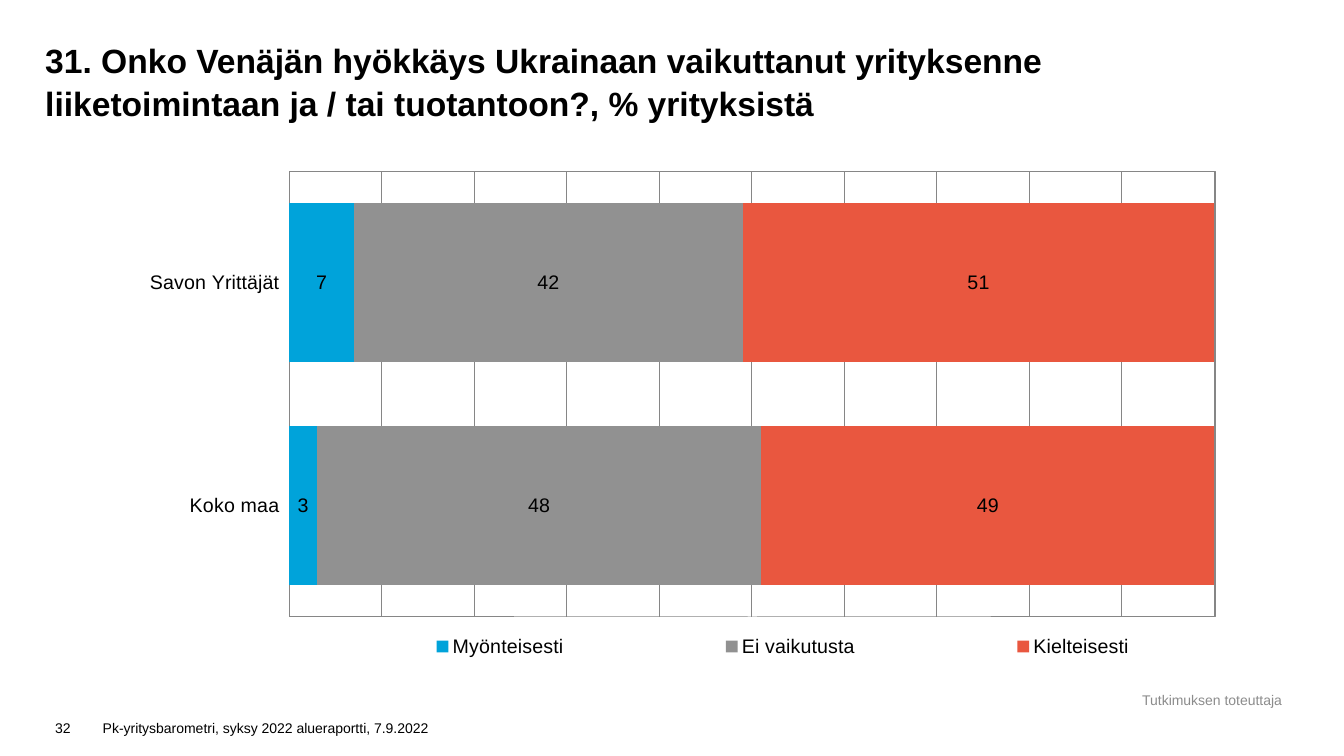
from dataclasses import dataclass

from lxml import etree
from pptx import Presentation
from pptx.chart.data import CategoryChartData
from pptx.dml.color import RGBColor
from pptx.enum.chart import XL_CHART_TYPE as ChartType
from pptx.enum.chart import XL_LABEL_POSITION as LabelPosition
from pptx.enum.chart import XL_LEGEND_POSITION as LegendPosition
from pptx.enum.chart import XL_TICK_LABEL_POSITION as TickLabels
from pptx.enum.chart import XL_TICK_MARK as TickMark
from pptx.enum.text import MSO_ANCHOR as Anchor
from pptx.enum.text import PP_ALIGN as Align
from pptx.oxml import parse_xml
from pptx.oxml.ns import nsdecls, qn
from pptx.util import Cm, Pt

TITLE = ("31. Onko Venäjän hyökkäys Ukrainaan vaikuttanut yrityksenne "
         "liiketoimintaan ja / tai tuotantoon?, % yrityksistä")
TITLE_PLACE = (1.14, 0, 31.24, 3.1)
CHART_PLACE = (1.14, 3.94, 31.24, 13)
PLOT_PLACE = {"x": 0.197, "y": 0.029, "w": 0.747, "h": 0.864}
LEGEND_PLACE = {"x": 0.19, "y": 0.915, "w": 0.81, "h": 0.07}

REGIONS = ["Savon Yrittäjät", "Koko maa"]
ANSWERS = [
    ("Myönteisesti", (7, 3), "00A3DA"),
    ("Ei vaikutusta", (42, 48), "919191"),
    ("Kielteisesti", (51, 49), "E9573F"),
]


@dataclass(frozen=True)
class Theme:
    font: str = "Arial"
    ink: str = "000000"
    muted: str = "8C8C8C"
    grid: str = "868686"
    title: int = 24
    chart: int = 14
    small: int = 10


theme = Theme()

SMALL_TEXTS = [
    ("Tutkimuksen toteuttaja", (28.35, 17.32, 4.39, 0.66),
     theme.muted, Align.CENTER, Anchor.MIDDLE),
    ("Pk-yritysbarometri, syksy 2022 alueraportti, 7.9.2022",
     (2.34, 17.78, 10.59, 0.89), theme.ink, Align.LEFT, Anchor.BOTTOM),
    ("32", (1.14, 17.78, 1.19, 0.89), theme.ink, Align.LEFT, Anchor.BOTTOM),
]


def lengths(place):
    return [Cm(value) for value in place]


def style_font(font, size, color=theme.ink, bold=False):
    font.name = theme.font
    font.size = Pt(size)
    font.bold = bold
    font.color.rgb = RGBColor.from_string(color)


def style_line(line):
    line.color.rgb = RGBColor.from_string(theme.grid)
    line.width = Pt(0.75)


def add_title(page):
    title = page.shapes.title
    title.left, title.top, title.width, title.height = lengths(TITLE_PLACE)
    frame = title.text_frame
    frame.margin_left = frame.margin_right = 0
    frame.margin_top = frame.margin_bottom = 0
    frame.vertical_anchor = Anchor.BOTTOM
    frame.word_wrap = True
    para = frame.paragraphs[0]
    para.text = TITLE
    para.alignment = Align.LEFT
    para.line_spacing = 1.06
    style_font(para.font, theme.title, bold=True)


def add_small_text(page, text, place, color, alignment, anchor):
    frame = page.shapes.add_textbox(*lengths(place)).text_frame
    frame.word_wrap = True
    frame.vertical_anchor = anchor
    para = frame.paragraphs[0]
    para.text = text
    para.alignment = alignment
    style_font(para.font, theme.small, color)


def manual_layout(place, inner=False):
    layout = parse_xml(f"<c:layout {nsdecls('c')}><c:manualLayout/></c:layout>")
    settings = {"layoutTarget": "inner"} if inner else {}
    settings |= {"xMode": "edge", "yMode": "edge"} | place
    for name, value in settings.items():
        etree.SubElement(layout[0], qn(f"c:{name}")).set("val", str(value))
    return layout


def drop_layout(parent):
    for layout in parent.findall(qn("c:layout")):
        parent.remove(layout)


def place_plot(chart):
    area = chart.plots[0]._element.getparent()
    drop_layout(area)
    area.insert(0, manual_layout(PLOT_PLACE, inner=True))
    area.append(parse_xml(
        f"<c:spPr {nsdecls('c', 'a')}><a:noFill/><a:ln w='9525'><a:solidFill>"
        f"<a:srgbClr val='{theme.grid}'/></a:solidFill></a:ln></c:spPr>"))


def add_legend(chart):
    chart.has_legend = True
    legend = chart.legend
    legend.position = LegendPosition.BOTTOM
    legend.include_in_layout = False
    style_font(legend.font, theme.chart)
    drop_layout(legend._element)
    legend._element.find(qn("c:legendPos")).addnext(manual_layout(LEGEND_PLACE))


def add_answer_chart(page):
    data = CategoryChartData(number_format="#,##0")
    data.categories = REGIONS
    for name, values, _ in ANSWERS:
        data.add_series(name, values)
    chart = page.shapes.add_chart(
        ChartType.BAR_STACKED, *lengths(CHART_PLACE), data).chart
    chart.has_title = False
    style_font(chart.font, theme.chart)

    plot = chart.plots[0]
    plot.gap_width = 40
    plot.overlap = 100
    plot.vary_by_categories = False
    for series, (_, _, color) in zip(plot.series, ANSWERS):
        series.format.fill.solid()
        series.format.fill.fore_color.rgb = RGBColor.from_string(color)
        labels = series.data_labels
        labels.show_value = True
        labels.number_format = "#,##0"
        labels.number_format_is_linked = False
        labels.position = LabelPosition.CENTER
        style_font(labels.font, theme.chart)

    regions = chart.category_axis
    regions.reverse_order = True
    regions.major_tick_mark = TickMark.NONE
    regions.tick_label_position = TickLabels.LOW
    style_font(regions.tick_labels.font, theme.chart)
    style_line(regions.format.line)

    shares = chart.value_axis
    shares.minimum_scale = 0
    shares.maximum_scale = 100.1
    shares.major_unit = 10
    shares.has_major_gridlines = True
    style_line(shares.major_gridlines.format.line)
    shares.visible = False

    add_legend(chart)
    place_plot(chart)


def main():
    deck = Presentation()
    deck.slide_width, deck.slide_height = Cm(33.87), Cm(19.05)
    page = deck.slides.add_slide(deck.slide_layouts.get_by_name("Title Only"))
    add_title(page)
    add_answer_chart(page)
    for small_text in SMALL_TEXTS:
        add_small_text(page, *small_text)
    deck.save("out.pptx")


if __name__ == "__main__":
    main()
